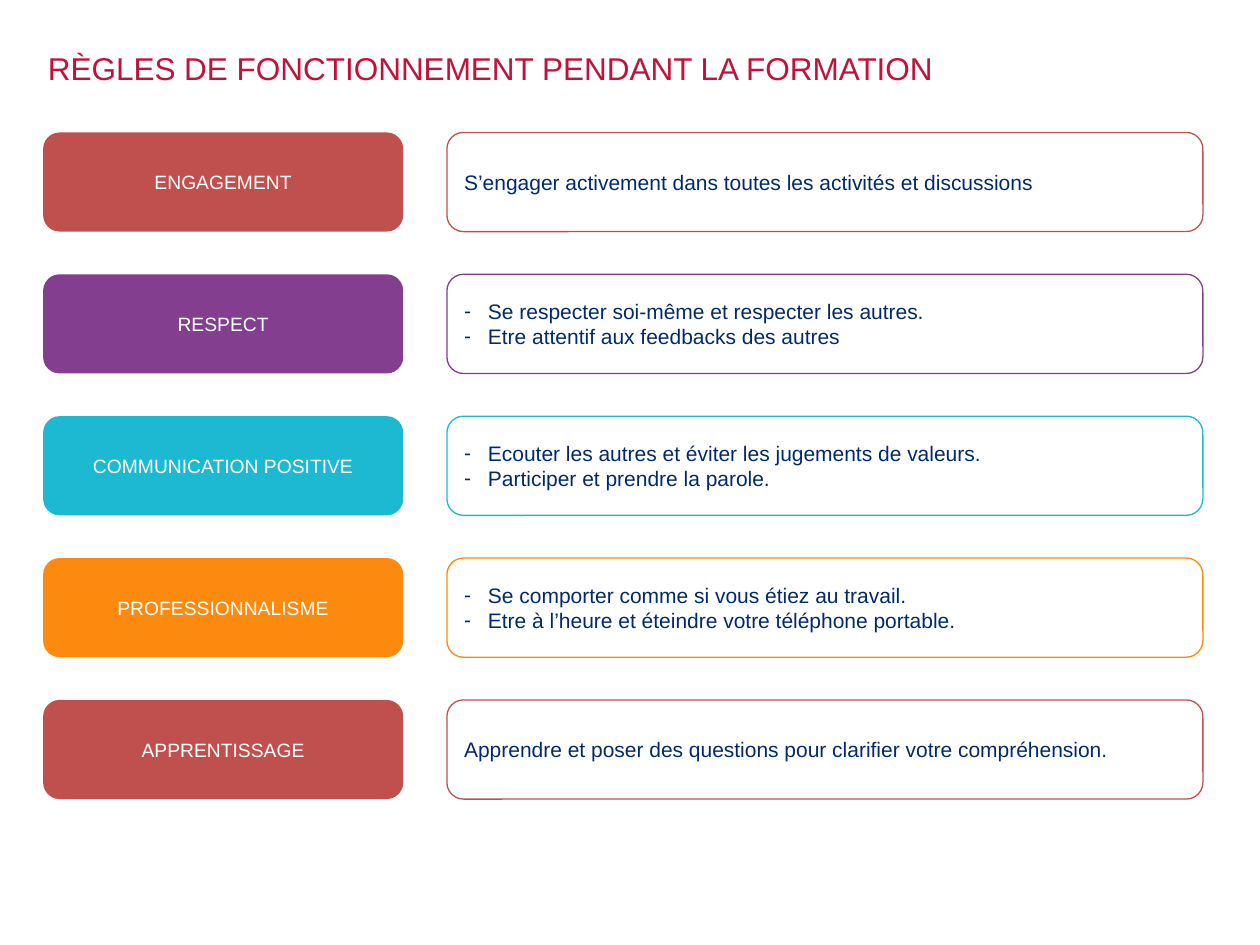
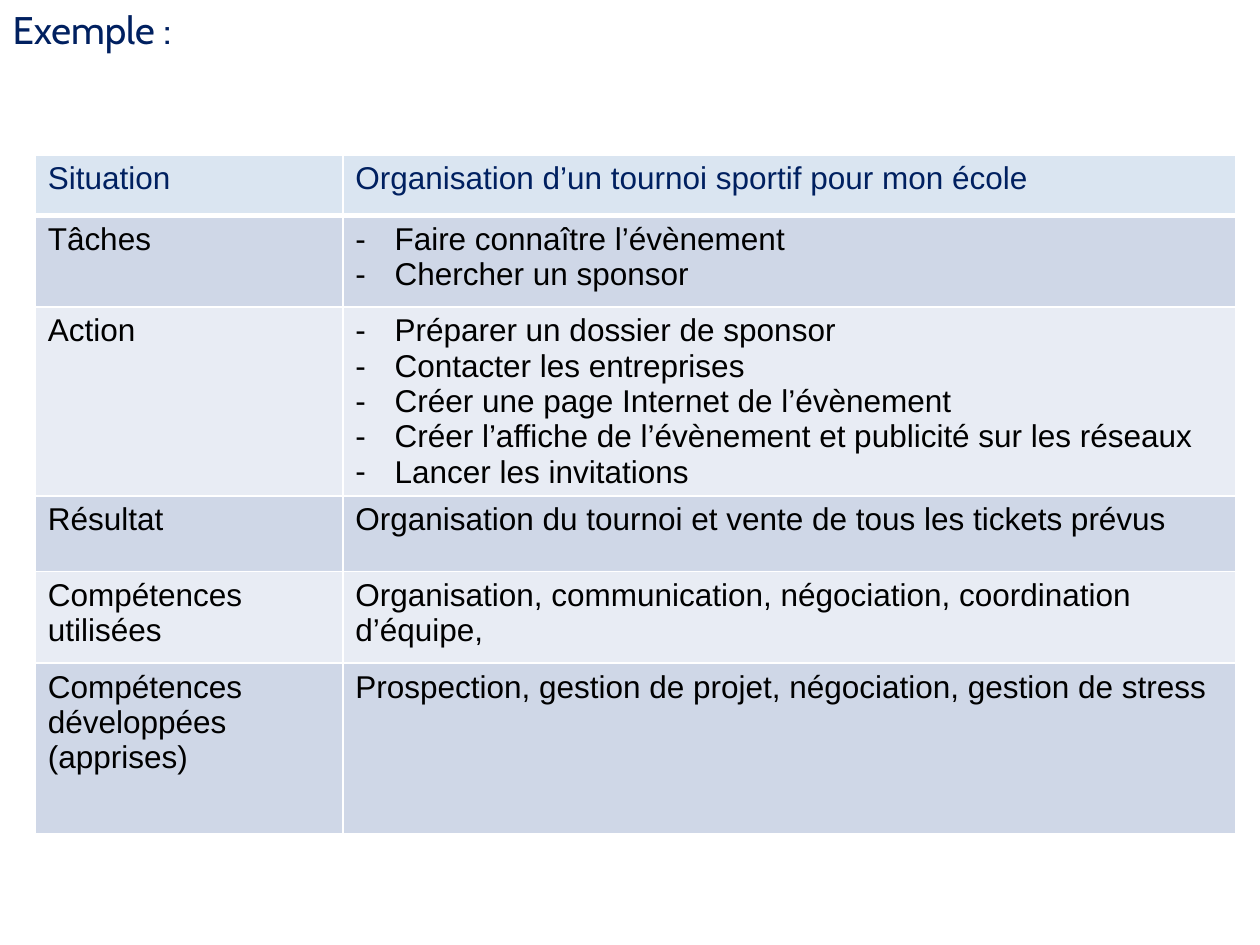
import pptx
import pptx.dml.color
import pptx.enum.shapes
import pptx.enum.text
import pptx.oxml.ns
import pptx.util
from lxml import etree

Cm = pptx.util.Cm
Pt = pptx.util.Pt
qn = pptx.oxml.ns.qn
Align = pptx.enum.text.PP_ALIGN
Anchor = pptx.enum.text.MSO_ANCHOR

HUES = {
    "red": "C0504D", "plum": "833E90", "teal": "1DB8D1", "gold": "FC8A0E",
    "rose": "C2113A", "navy": "002A6C", "ink": "002060", "black": "000000",
    "white": "FFFFFF", "head": "DAE5F1", "dark": "CFD7E7", "light": "E8ECF4",
}

RULES = [
    ("ENGAGEMENT", "red", ["S’engager activement dans toutes les activités et discussions"]),
    ("RESPECT", "plum", ["Se respecter soi-même et respecter les autres.",
                         "Etre attentif aux feedbacks des autres"]),
    ("COMMUNICATION POSITIVE", "teal", ["Ecouter les autres et éviter les jugements de valeurs.",
                                        "Participer et prendre la parole."]),
    ("PROFESSIONNALISME", "gold", ["Se comporter comme si vous étiez au travail.",
                                   "Etre à l’heure et éteindre votre téléphone portable."]),
    ("APPRENTISSAGE", "red", ["Apprendre et poser des questions pour clarifier votre compréhension."]),
]

ROWS = [
    (1.22, "Situation", ["Organisation d’un tournoi sportif pour mon école"]),
    (1.85, "Tâches", ["Faire connaître l’évènement", "Chercher un sponsor"]),
    (3.76, "Action", ["Préparer un dossier de sponsor",
                      "Contacter les entreprises",
                      "Créer une page Internet de l’évènement",
                      "Créer l’affiche de l’évènement et publicité sur les réseaux",
                      "Lancer les invitations"]),
    (1.52, "Résultat", ["Organisation du tournoi et vente de tous les tickets prévus"]),
    (1.85, "Compétences utilisées",
     ["Organisation, communication, négociation, coordination d’équipe,"]),
    (3.43, "Compétences développées (apprises)",
     ["Prospection, gestion de projet, négociation, gestion de stress"]),
]


class Deck:
    """Holds the shared style and the current slide."""

    def __init__(self):
        self.show = pptx.Presentation()
        self.show.slide_width, self.show.slide_height = Cm(25.4), Cm(19.05)
        self.slide = None

    def hue(self, name):
        return pptx.dml.color.RGBColor.from_string(HUES[name])

    def label(self, frame, lines, size, hue, font="Arial", align=Align.LEFT, dent=0.48):
        frame.text = "\n".join(lines)
        for para in frame.paragraphs:
            para.alignment = align
            if len(lines) > 1:
                self.dash(para, dent)
            for run in para.runs:
                run.font.name, run.font.size, run.font.bold = font, Pt(size), False
                run.font.color.rgb = self.hue(hue)

    def dash(self, para, dent):
        props = para._p.get_or_add_pPr()
        props.set("marL", str(Cm(dent)))
        props.set("indent", str(-Cm(dent)))
        etree.SubElement(props, qn("a:buFont")).set("typeface", "Arial")
        etree.SubElement(props, qn("a:buChar")).set("char", "-")

    def start(self, text, place, size, hue, font="Arial"):
        self.slide = self.show.slides.add_slide(self.show.slide_layouts[5])
        title = self.slide.shapes.title
        title.left, title.top, title.width, title.height = map(Cm, place)
        frame = title.text_frame
        frame.auto_size = pptx.enum.text.MSO_AUTO_SIZE.NONE
        frame.vertical_anchor = Anchor.TOP
        self.label(frame, [text], size, hue, font)

    def box(self, place, lines, size, hue, fill=None, edge=None, align=Align.LEFT):
        kind = pptx.enum.shapes.MSO_SHAPE.ROUNDED_RECTANGLE
        shape = self.slide.shapes.add_shape(kind, *map(Cm, place))
        shape.shadow.inherit = False
        if fill:
            shape.fill.solid()
            shape.fill.fore_color.rgb = self.hue(fill)
        else:
            shape.fill.background()
        if edge:
            shape.line.color.rgb = self.hue(edge)
            shape.line.width = Pt(0.75)
        else:
            shape.line.fill.background()
        shape.text_frame.vertical_anchor = Anchor.MIDDLE
        self.label(shape.text_frame, lines, size, hue, align=align)

    def rim(self, cell, **widths):
        props = cell._tc.get_or_add_tcPr()
        for side in "LRTB":
            line = etree.SubElement(props, qn("a:ln" + side))
            line.set("w", str(Pt(widths.get(side, 1))))
            fill = etree.SubElement(line, qn("a:solidFill"))
            etree.SubElement(fill, qn("a:srgbClr")).set("val", HUES["white"])

    def table(self, left, top, wide, rows):
        high = sum(row[0] for row in rows)
        grid = self.slide.shapes.add_table(len(rows), len(wide), Cm(left), Cm(top),
                                           Cm(sum(wide)), Cm(high)).table
        grid.horz_banding = False
        for col, width in zip(grid.columns, wide):
            col.width = Cm(width)
        for i, (height, name, lines) in enumerate(rows):
            grid.rows[i].height = Cm(height)
            fill = "head" if i == 0 else ("light", "dark")[i % 2]
            for j, text in enumerate(([name], lines)):
                cell = grid.cell(i, j)
                self.rim(cell, T=3 if i == 1 else 1, B=3 if i == 0 else 1)
                cell.fill.solid()
                cell.fill.fore_color.rgb = self.hue(fill)
                self.label(cell.text_frame, text, 18, "black" if i else "ink", dent=0.79)


def main():
    deck = Deck()
    deck.start("RÈGLES DE FONCTIONNEMENT PENDANT LA FORMATION",
               (0.71, 0.86, 20.4, 1.8), 18, "rose")
    for i, (name, hue, lines) in enumerate(RULES):
        top = 2.67 + 2.86 * i
        deck.box((0.87, top, 7.26, 2), [name], 11, "white", fill=hue, align=Align.CENTER)
        deck.box((9.01, top, 15.24, 2), lines, 12, "navy", edge=hue)

    deck.start("Exemple :", (0, 0, 24.13, 17.35), 22, "ink", "Cabin")
    deck.table(0.71, 3.12, (6.2, 18), ROWS)
    deck.show.save("out.pptx")


if __name__ == "__main__":
    main()
